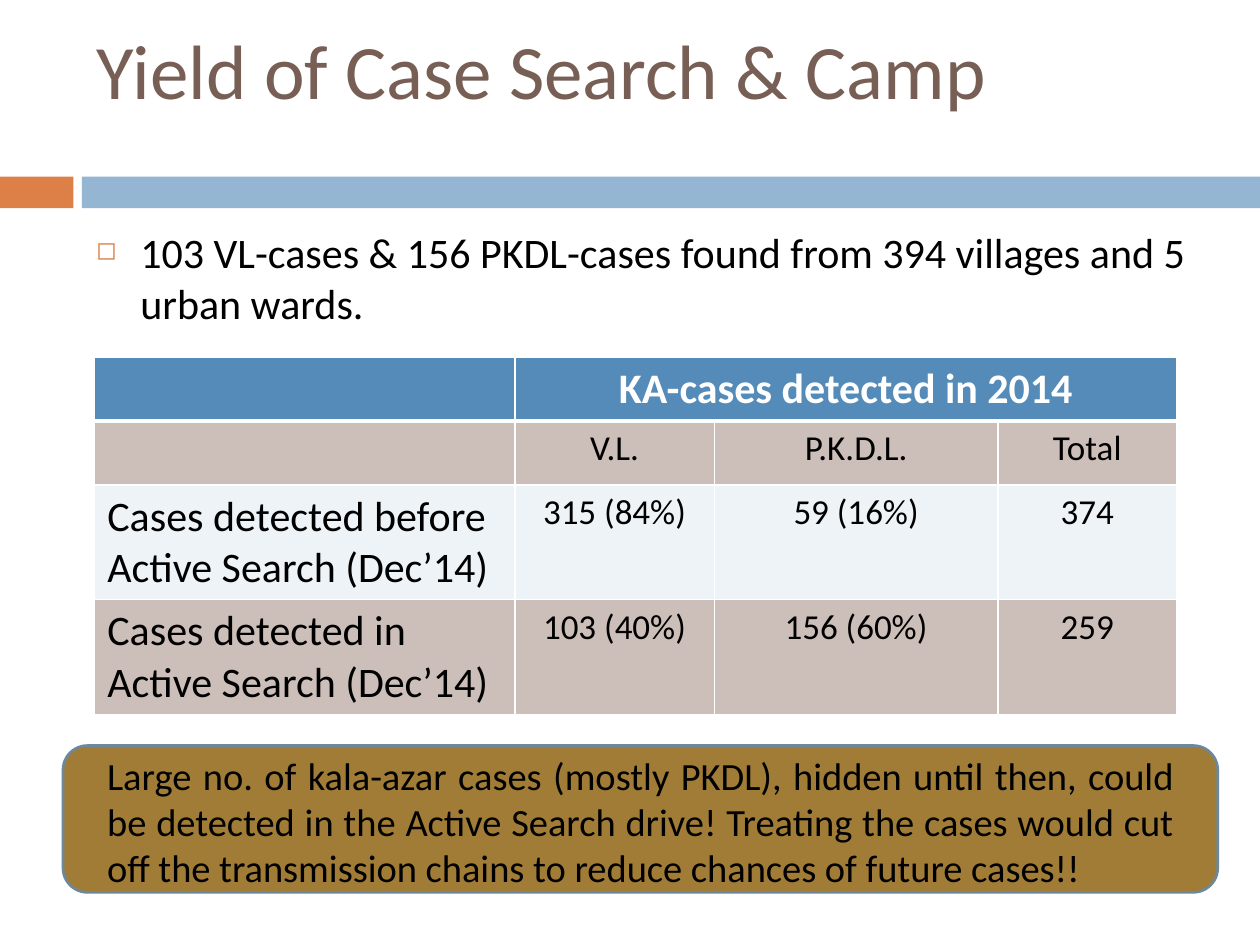
from dataclasses import dataclass

from lxml.etree import SubElement
from pptx import Presentation
from pptx.dml.color import RGBColor
from pptx.enum.shapes import MSO_SHAPE
from pptx.enum.text import MSO_ANCHOR, MSO_AUTO_SIZE, PP_ALIGN
from pptx.oxml.ns import qn
from pptx.util import Cm, Pt


@dataclass(frozen=True)
class Theme:
    """Hold the colours, font and type sizes of the slide."""

    font: str = "Calibri"
    title: str = "775F55"
    text: str = "000000"
    white: str = "FFFFFF"
    orange: str = "DD8047"
    blue: str = "94B6D2"
    header: str = "558BB8"
    band_dark: str = "CCBEB8"
    band_light: str = "EEF3F7"
    callout: str = "A17C36"
    callout_line: str = "6D879B"
    title_size: int = 44
    body_size: int = 24
    callout_size: int = 22
    value_size: int = 20


THEME = Theme()


def write_text(frame, text, size, color=THEME.text, bold=False, align=PP_ALIGN.LEFT):
    """Write one formatted paragraph into a text frame and return it."""
    frame.word_wrap = True
    paragraph = frame.paragraphs[0]
    paragraph.alignment = align
    run = paragraph.add_run()
    run.text = text
    run.font.name = THEME.font
    run.font.size = Pt(size)
    run.font.bold = bold
    run.font.color.rgb = RGBColor.from_string(color)
    return paragraph


def set_bullet(paragraph, character, color, percent, indent):
    """Give a paragraph a coloured bullet with a hanging indent."""
    properties = paragraph._p.get_or_add_pPr()
    properties.set("marL", str(indent))
    properties.set("indent", str(-indent))
    bullet_color = SubElement(properties, qn("a:buClr"))
    SubElement(bullet_color, qn("a:srgbClr"), val=color)
    SubElement(properties, qn("a:buSzPct"), val=str(percent * 1000))
    SubElement(properties, qn("a:buChar"), char=character)


def set_borders(cell, color, bottom_width=1):
    """Draw the four borders of a table cell."""
    properties = cell._tc.get_or_add_tcPr()
    for side, width in (("L", 1), ("R", 1), ("T", 1), ("B", bottom_width)):
        line = SubElement(properties, qn(f"a:ln{side}"), w=str(Pt(width)))
        fill = SubElement(line, qn("a:solidFill"))
        SubElement(fill, qn("a:srgbClr"), val=color)


class SlideBuilder:
    """Add styled elements to the current slide."""

    def __init__(self, slide, theme):
        """Keep the slide and its theme."""
        self.slide = slide
        self.theme = theme

    def title(self, text, left, top, width, height):
        """Place and fill the title placeholder."""
        shape = self.slide.shapes.title
        shape.left, shape.top, shape.width, shape.height = map(Cm, (left, top, width, height))
        frame = shape.text_frame
        frame.auto_size = MSO_AUTO_SIZE.NONE
        frame.vertical_anchor = MSO_ANCHOR.MIDDLE
        write_text(frame, text, self.theme.title_size, color=self.theme.title)

    def box(self, kind, left, top, width, height, fill, line=None):
        """Add a filled shape with an optional outline."""
        shape = self.slide.shapes.add_shape(kind, *map(Cm, (left, top, width, height)))
        shape.shadow.inherit = False
        shape.fill.solid()
        shape.fill.fore_color.rgb = RGBColor.from_string(fill)
        if line:
            shape.line.color.rgb = RGBColor.from_string(line)
            shape.line.width = Pt(1.5)
        else:
            shape.line.fill.background()

    def text(self, text, left, top, width, height, **style):
        """Add a text box and return its paragraph."""
        shape = self.slide.shapes.add_textbox(*map(Cm, (left, top, width, height)))
        return write_text(shape.text_frame, text, **style)

    def table(self, rows, left, top, widths, heights):
        """Add a banded table whose first row spans the value columns."""
        theme = self.theme
        frame = self.slide.shapes.add_table(
            len(rows), len(widths), *map(Cm, (left, top, sum(widths), sum(heights))))
        table = frame.table
        for column, width in zip(table.columns, widths):
            column.width = Cm(width)
        for row, height in zip(table.rows, heights):
            row.height = Cm(height)
        table.cell(0, 1).merge(table.cell(0, len(widths) - 1))
        for row_index, row in enumerate(rows):
            is_header = row_index == 0
            band = theme.band_dark if row_index % 2 else theme.band_light
            for column_index, text in enumerate(row):
                cell = table.cell(row_index, column_index)
                set_borders(cell, theme.white, bottom_width=3 if is_header else 1)
                cell.fill.solid()
                cell.fill.fore_color.rgb = RGBColor.from_string(theme.header if is_header else band)
                if text:
                    is_label = column_index == 0
                    write_text(
                        cell.text_frame, text,
                        size=theme.body_size if is_header or is_label else theme.value_size,
                        color=theme.white if is_header else theme.text,
                        bold=is_header,
                        align=PP_ALIGN.LEFT if is_label else PP_ALIGN.CENTER)


def main():
    """Build and save the presentation."""
    presentation = Presentation()
    presentation.slide_width, presentation.slide_height = Cm(25.4), Cm(19.05)
    slide = presentation.slides.add_slide(presentation.slide_layouts[5])
    builder = SlideBuilder(slide, THEME)

    builder.box(MSO_SHAPE.RECTANGLE, 0, 3.56, 1.48, 0.64, THEME.orange)
    builder.box(MSO_SHAPE.RECTANGLE, 1.65, 3.56, 23.75, 0.64, THEME.blue)
    builder.title("Yield of Case Search & Camp", 1.69, 0, 22.65, 2.75)

    finding = builder.text(
        "103 VL-cases & 156 PKDL-cases found from 394 villages and 5 urban wards.",
        1.69, 4.45, 22.65, 2.5, size=THEME.body_size)
    finding.space_before = Pt(7)
    set_bullet(finding, "◻", THEME.orange, 60, Cm(0.89))

    builder.table(
        [
            ["", "KA-cases detected in 2014", "", ""],
            ["", "V.L.", "P.K.D.L.", "Total"],
            ["Cases detected before Active Search (Dec’14)", "315 (84%)", "59 (16%)", "374"],
            ["Cases detected in Active Search (Dec’14)", "103 (40%)", "156 (60%)", "259"],
        ],
        1.91, 7.2, widths=(8.47, 4.02, 5.72, 3.6), heights=(1.29, 1.29, 2.31, 2.31))

    builder.box(MSO_SHAPE.ROUNDED_RECTANGLE, 1.27, 15.03, 23.28, 2.96,
                THEME.callout, line=THEME.callout_line)
    builder.text(
        "Large no. of kala-azar cases (mostly PKDL), hidden until then, could be detected "
        "in the Active Search drive! Treating the cases would cut off the transmission "
        "chains to reduce chances of future cases!!",
        1.91, 15.03, 22.01, 2.96, size=THEME.callout_size, align=PP_ALIGN.JUSTIFY)

    presentation.save("out.pptx")


if __name__ == "__main__":
    main()
